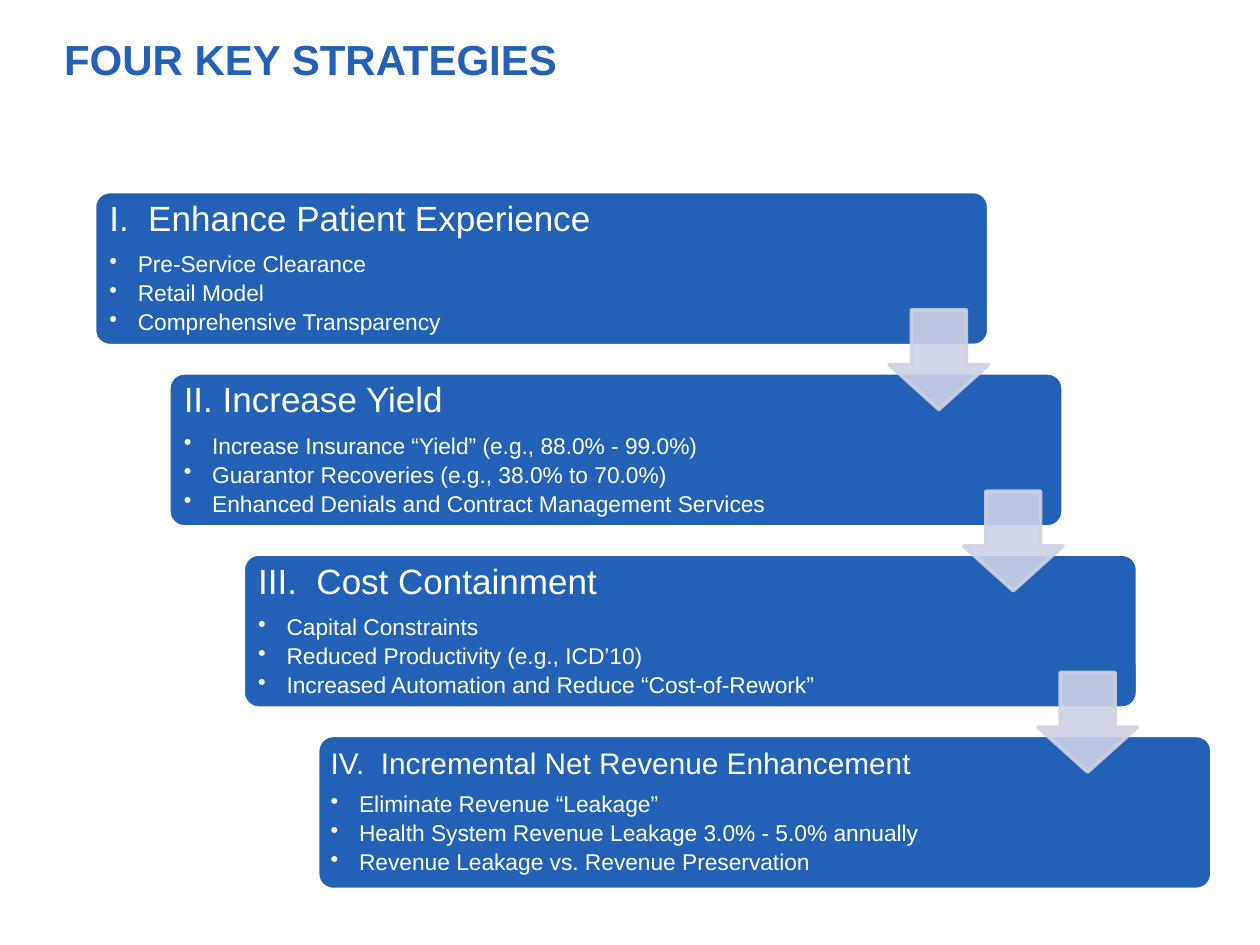
from lxml.etree import SubElement
from pptx import Presentation
from pptx.dml.color import RGBColor
from pptx.enum.shapes import MSO_SHAPE as Preset
from pptx.enum.text import MSO_ANCHOR as Anchor, PP_ALIGN as Align
from pptx.oxml.ns import qn
from pptx.util import Pt

COLORS = {"blue": "2261B5", "white": "FFFFFF", "arrow": "CDD2E5"}

strategies = [
    ("I.  Enhance Patient Experience", 20, 6,
     ["Pre-Service Clearance", "Retail Model", "Comprehensive Transparency"]),
    ("II. Increase Yield", 20, 6,
     ["Increase Insurance “Yield” (e.g., 88.0% - 99.0%)",
      "Guarantor Recoveries (e.g., 38.0% to 70.0%)",
      "Enhanced Denials and Contract Management Services"]),
    ("III.  Cost Containment", 20, 6,
     ["Capital Constraints", "Reduced Productivity (e.g., ICD’10)",
      "Increased Automation and Reduce “Cost-of-Rework”"]),
    ("IV.  Incremental Net Revenue Enhancement", 17, 5,
     ["Eliminate Revenue “Leakage”",
      "Health System Revenue Leakage 3.0% - 5.0% annually",
      "Revenue Leakage vs. Revenue Preservation"]),
]
step_x, step_y = 42.5, 103.6


def write(paragraph, wording, size, color, bold=False, after=0):
    run = paragraph.add_run()
    run.text = wording
    run.font.color.rgb = RGBColor.from_string(COLORS[color])
    for key, value in {"name": "Arial", "size": Pt(size), "bold": bold}.items():
        setattr(run.font, key, value)
    layout = {"alignment": Align.LEFT, "line_spacing": 0.9, "space_after": Pt(after)}
    for key, value in layout.items():
        setattr(paragraph, key, value)


def block(preset, left, top, width, height, adjustments, fill, line):
    shape = slide.shapes.add_shape(preset, Pt(left), Pt(top), Pt(width), Pt(height))
    shape.shadow.inherit = False
    for index, value in enumerate(adjustments):
        shape.adjustments[index] = value
    shape.fill.solid()
    shape.fill.fore_color.rgb = RGBColor.from_string(COLORS[fill])
    shape.line.color.rgb = RGBColor.from_string(COLORS[line])
    shape.line.width = Pt(2)
    return shape


deck = Presentation()
deck.slide_width, deck.slide_height = Pt(720), Pt(540)
slide = deck.slides.add_slide(deck.slide_layouts[6])

title = slide.shapes.add_textbox(Pt(29.5), Pt(18.7), Pt(663), Pt(41)).text_frame
title.word_wrap = True
write(title.paragraphs[0], "FOUR KEY STRATEGIES", 24, "blue", bold=True)

for row, (heading, heading_size, inset, points) in enumerate(strategies):
    left, top = 54 + row * step_x, 109.5 + row * step_y
    block(Preset.ROUNDED_RECTANGLE, left, top, 511, 88, [0.1], "blue", "white")
    content = slide.shapes.add_textbox(
        Pt(left + 2.5), Pt(top + 2.5), Pt(408), Pt(83)).text_frame
    frame_format = {"word_wrap": True, "vertical_anchor": Anchor.MIDDLE}
    for side in ("left", "top", "right", "bottom"):
        frame_format[f"margin_{side}"] = Pt(inset)
    for key, value in frame_format.items():
        setattr(content, key, value)
    write(content.paragraphs[0], heading, heading_size, "white", after=heading_size * 0.4)
    for point in points:
        item = content.add_paragraph()
        item.level = 1
        write(item, point, 13, "white", after=2.5)
        properties = item._p.get_or_add_pPr()
        properties.set("marL", str(Pt(16.2)))
        properties.set("indent", str(-Pt(16.2)))
        SubElement(properties, qn("a:buChar")).set("char", "•")

for row in range(len(strategies) - 1):
    arrow = block(Preset.DOWN_ARROW, 508 + row * step_x, 177 + row * step_y,
                  57, 57, [0.55, 0.45], "arrow", "arrow")
    for tint in arrow._element.spPr.iter(qn("a:srgbClr")):
        SubElement(tint, qn("a:alpha")).set("val", "90000")

deck.save("out.pptx")
